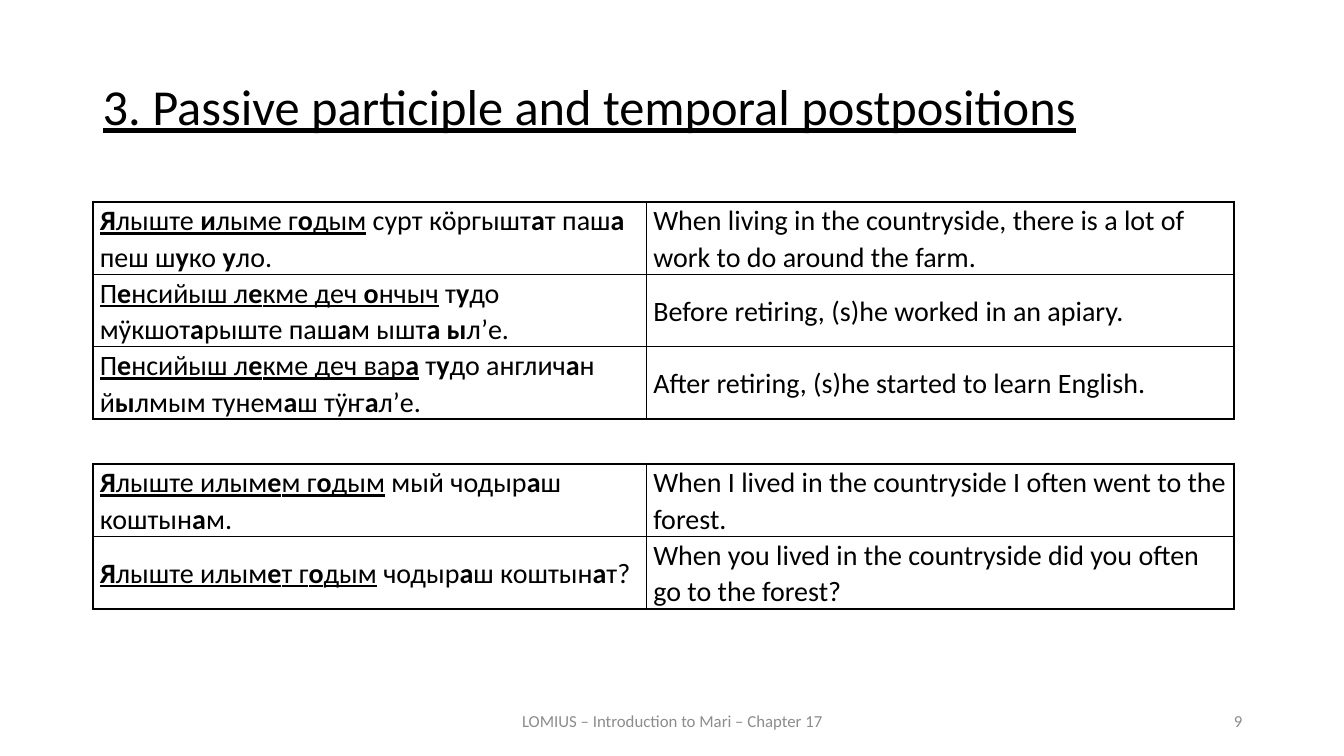
"""Build a Mari grammar slide with two tables of example sentences."""
from dataclasses import dataclass

from lxml.etree import SubElement
from pptx import Presentation
from pptx.dml.color import RGBColor as Color
from pptx.enum.text import MSO_ANCHOR as Anchor, PP_ALIGN as Align
from pptx.oxml.ns import qn
from pptx.util import Inches, Pt


@dataclass(frozen=True)
class Theme:
    font: str = "Calibri"
    ink: str = "000000"
    gray: str = "8C8C8C"
    title: int = 36
    body: int = 20
    foot: int = 12
    thick: float = 1.5
    thin: float = 1


THEME = Theme()
LEFT = 0.92
WIDTHS = (5.49, 5.83)
ROW = 0.72

TIMES = [
    ("*Я*лыште *и*лыме г*о*дым| сурт кӧргышт*а*т паш*а* пеш ш*у*ко *у*ло.",
     "When living in the countryside, there is a lot of work to do around the farm."),
    ("П*е*нсийыш л*е*кме деч *о*нчыч| т*у*до мӱкшот*а*рыште паш*а*м ышт*а ы*л’е.",
     "Before retiring, (s)he worked in an apiary."),
    ("П*е*нсийыш л*е*кме деч вар*а*| т*у*до англич*а*н й*ы*лмым тунем*а*ш тӱҥ*а*л’е.",
     "After retiring, (s)he started to learn English."),
]
PERSONS = [
    ("*Я*лыште илым*е*м г*о*дым| мый чодыр*а*ш коштын*а*м.",
     "When I lived in the countryside I often went to the forest."),
    ("*Я*лыште илым*е*т г*о*дым| чодыр*а*ш коштын*а*т?",
     "When you lived in the countryside did you often go to the forest?"),
]


def add_run(para, text, size, color=THEME.ink, bold=False, under=False):
    run = para.add_run()
    run.text = text
    font = run.font
    font.name, font.size = THEME.font, Pt(size)
    font.bold, font.underline = bold, under
    font.color.rgb = Color.from_string(color)


def add_marked(para, text):
    """Add runs: stars enclose bold letters, a bar ends the underlined part."""
    head, bar, tail = text.rpartition("|")
    for part, under in ((head, True), (tail, False)):
        for i, piece in enumerate(part.split("*")):
            if piece:
                add_run(para, piece, THEME.body, bold=i % 2 == 1, under=under)


def add_label(slide, box, text, size, color, align, anchor=Anchor.MIDDLE, under=False):
    frame = slide.shapes.add_textbox(*map(Inches, box)).text_frame
    frame.word_wrap = True
    frame.vertical_anchor = anchor
    para = frame.paragraphs[0]
    para.alignment = align
    add_run(para, text, size, color, under=under)
    return para


def set_edge(cell, side, width):
    props = cell._tc.get_or_add_tcPr()
    line = SubElement(props, qn(f"a:ln{side}"), w=str(Pt(width)))
    fill = SubElement(line, qn("a:solidFill"))
    SubElement(fill, qn("a:srgbClr"), val=THEME.ink)


def fill_cell(cell, text, outer):
    for side in "LRTB":
        set_edge(cell, side, THEME.thick if side in outer else THEME.thin)
    cell.fill.background()
    cell.vertical_anchor = Anchor.MIDDLE
    cell.margin_left = cell.margin_right = Inches(0.07)
    cell.margin_top = cell.margin_bottom = Inches(0)
    para = cell.text_frame.paragraphs[0]
    para.line_spacing = 1.07
    add_marked(para, text)


def add_grid(slide, top, pairs):
    count = len(pairs)
    size = (LEFT, top, sum(WIDTHS), ROW * count)
    table = slide.shapes.add_table(count, len(WIDTHS), *map(Inches, size)).table
    table.first_row = table.horz_banding = False
    for col, width in zip(table.columns, WIDTHS):
        col.width = Inches(width)
    for i, pair in enumerate(pairs):
        ends = ("T" if i == 0 else "") + ("B" if i == count - 1 else "")
        for j, text in enumerate(pair):
            fill_cell(table.cell(i, j), text, ends + "LR"[j])


def main():
    deck = Presentation()
    deck.slide_width, deck.slide_height = Inches(13.33), Inches(7.5)
    slide = deck.slides.add_slide(deck.slide_layouts[6])
    title = add_label(slide, (LEFT, 0.76, 11.5, 0.83),
                      "3. Passive participle and temporal postpositions",
                      THEME.title, THEME.ink, Align.JUSTIFY, Anchor.TOP, True)
    title.line_spacing = 0.9
    title.space_before = Pt(12)
    add_label(slide, (4.42, 6.95, 4.5, 0.4), "LOMIUS – Introduction to Mari – Chapter 17",
              THEME.foot, THEME.gray, Align.CENTER)
    add_label(slide, (9.42, 6.95, 3, 0.4), "9", THEME.foot, THEME.gray, Align.RIGHT)
    add_grid(slide, 2, TIMES)
    add_grid(slide, 4.6, PERSONS)
    deck.save("out.pptx")


if __name__ == "__main__":
    main()
